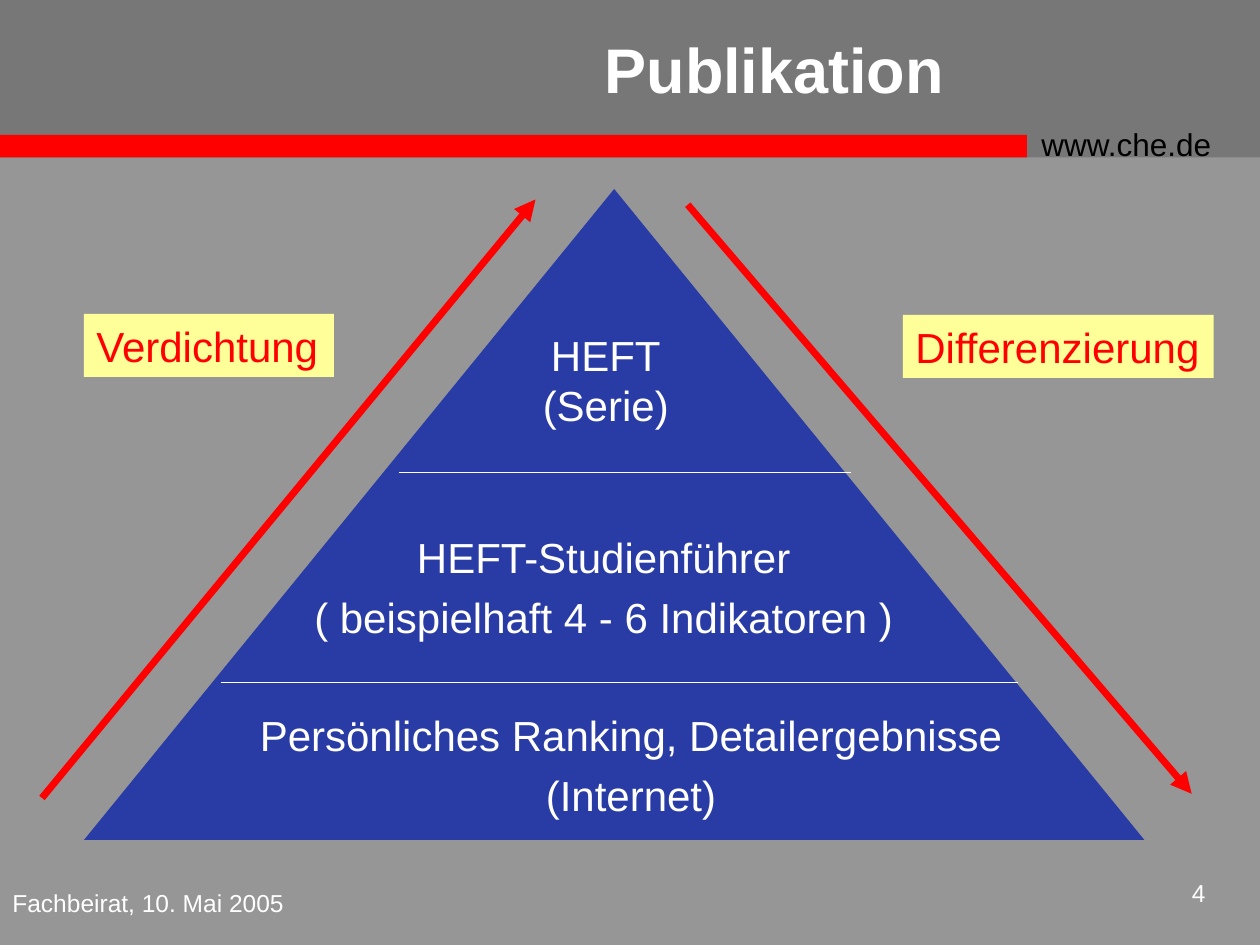
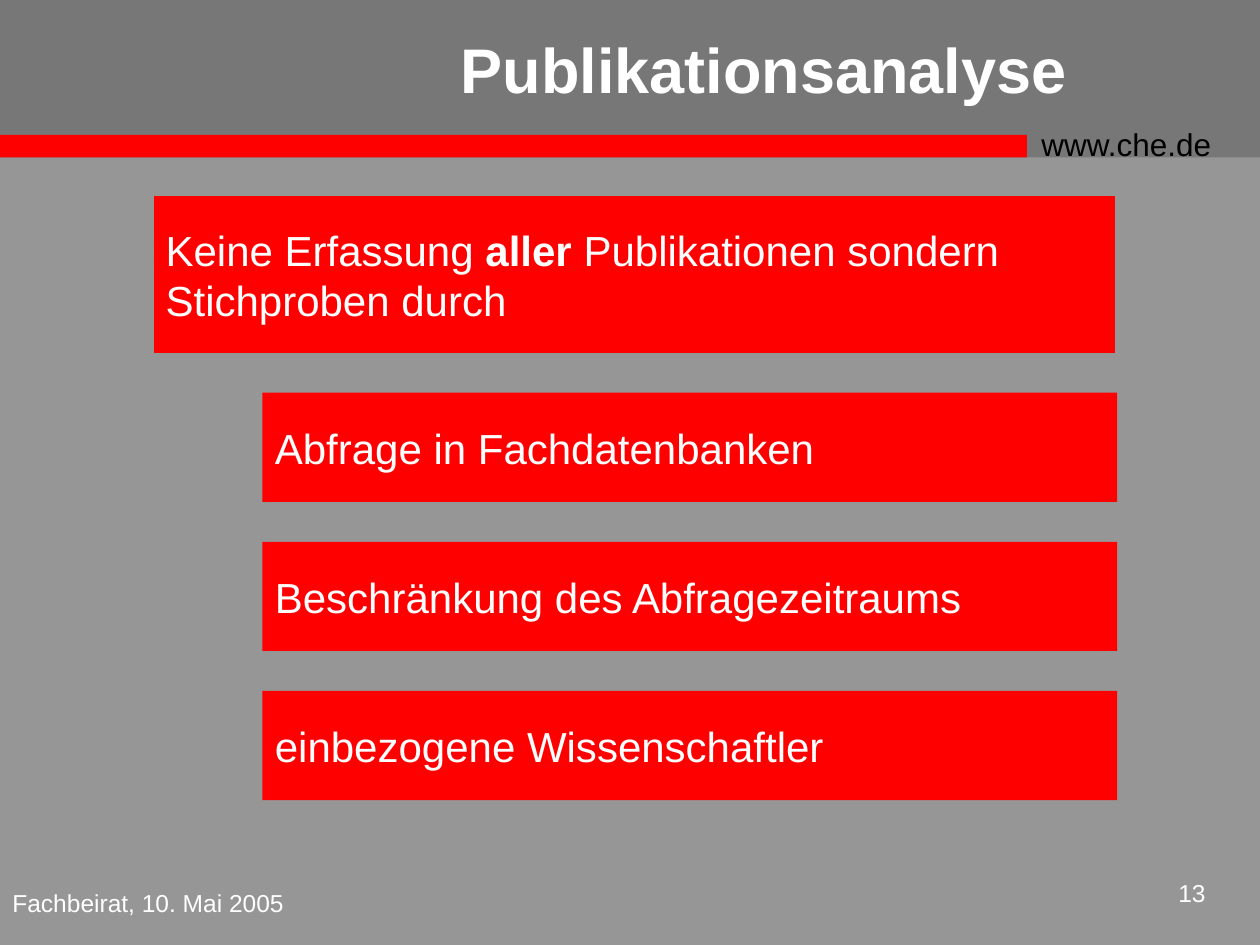
from lxml.etree import SubElement
from pptx import Presentation
from pptx.dml.color import RGBColor
from pptx.enum.shapes import MSO_CONNECTOR, MSO_SHAPE
from pptx.enum.text import MSO_ANCHOR, PP_ALIGN
from pptx.oxml.ns import qn
from pptx.util import Inches, Pt

WHITE = RGBColor(0xFF, 0xFF, 0xFF)
BLACK = RGBColor(0x00, 0x00, 0x00)
RED = RGBColor(0xFF, 0x00, 0x00)
BLUE = RGBColor(0x29, 0x3B, 0xA5)
YELLOW = RGBColor(0xFF, 0xFF, 0x99)
GREY = RGBColor(0x96, 0x96, 0x96)
DARK_GREY = RGBColor(0x77, 0x77, 0x77)

WIDTH, HEIGHT = Inches(10), Inches(7.5)
COLUMNS, ROWS = 120, 90

BODY = {"name": "Arial", "size": Pt(24), "color": WHITE}
TITLE = BODY | {"size": Pt(36), "bold": True}
SMALL = BODY | {"size": Pt(14)}
ADDRESS = BODY | {"size": Pt(18), "color": BLACK}
LABEL = BODY | {"color": RED}


def across(columns):
    return round(WIDTH * columns / COLUMNS)


def down(rows):
    return round(HEIGHT * rows / ROWS)


def place(left, top, width, height):
    return across(left), down(top), across(width), down(height)


def format_font(font, style):
    for name, value in style.items():
        if name == "color":
            font.color.rgb = value
        else:
            setattr(font, name, value)


def write(box, paragraphs, style, align=PP_ALIGN.LEFT, anchor=MSO_ANCHOR.TOP, gap=0):
    frame = box.text_frame
    frame.word_wrap = True
    frame.vertical_anchor = anchor
    for index, spans in enumerate(paragraphs):
        para = frame.add_paragraph() if index else frame.paragraphs[0]
        para.alignment = align
        if index:
            para.space_before = Pt(gap)
        for text, changes in spans:
            span = para.add_run()
            span.text = text
            format_font(span.font, style | changes)


def plain(*lines):
    return [[(line, {})] for line in lines]


def add_text(page, area, paragraphs, style, **layout):
    write(page.shapes.add_textbox(*place(*area)), paragraphs, style, **layout)


def add_block(page, area, fill, kind=MSO_SHAPE.RECTANGLE):
    block = page.shapes.add_shape(kind, *place(*area))
    block.shadow.inherit = False
    block.fill.solid()
    block.fill.fore_color.rgb = fill
    block.line.fill.background()
    return block


def add_line(page, start, end, color, weight, arrow=False):
    line = page.shapes.add_connector(
        MSO_CONNECTOR.STRAIGHT,
        across(start[0]), down(start[1]), across(end[0]), down(end[1]))
    line.line.color.rgb = color
    line.line.width = Pt(weight)
    properties = line._element.spPr
    if arrow:
        SubElement(properties.find(qn("a:ln")), qn("a:tailEnd"), type="triangle")
    SubElement(properties, qn("a:effectLst"))


def add_page(deck, title, title_left, number):
    page = deck.slides.add_slide(deck.slide_layouts[6])
    page.background.fill.solid()
    page.background.fill.fore_color.rgb = GREY
    add_block(page, (0, 0, COLUMNS, 15), DARK_GREY)
    add_block(page, (0, 12.85, 97.8, 2.15), RED)
    add_text(page, (98, 11.3, 21, 4.8), plain("www.che.de"), ADDRESS)
    add_text(page, (109, 83, 7, 5), plain(number), SMALL, align=PP_ALIGN.RIGHT)
    add_text(page, (0, 84, 28.8, 6), plain("Fachbeirat, 10. Mai 2005"), SMALL)
    add_text(page, (title_left, 0, 115.7 - title_left, 13), plain(title), TITLE,
             align=PP_ALIGN.CENTER, anchor=MSO_ANCHOR.MIDDLE)
    return page


def build_pyramid(deck):
    page = add_page(deck, "Publikation", 31.8, "4")
    add_block(page, (8, 18, 101, 62), BLUE, MSO_SHAPE.ISOSCELES_TRIANGLE)
    levels = [
        ((50.5, 30.8, 14.4, 10.8), ("HEFT", "(Serie)"), 0),
        ((7, 50, 101, 20.3),
         ("HEFT-Studienführer", "( beispielhaft 4 - 6 Indikatoren )"), 5.5),
        ((5, 67, 110.2, 16.3),
         ("Persönliches Ranking, Detailergebnisse", "(Internet)"), 5.5),
    ]
    for area, lines, gap in levels:
        add_text(page, area, plain(*lines), BODY, align=PP_ALIGN.CENTER, gap=gap)
    for left, right, row in [(38, 81, 45), (21, 97, 65)]:
        add_line(page, (left, row), (right, row), WHITE, 0.75)
    for area, text in [((8, 29.9, 23.8, 6), "Verdichtung"),
                       ((86, 30, 29.6, 6), "Differenzierung")]:
        write(add_block(page, area, YELLOW), plain(text), LABEL)
    for start, end in [((4, 76), (51, 19)), ((65.5, 19.5), (113.5, 75.6))]:
        add_line(page, start, end, RED, 4, arrow=True)


def build_analysis(deck):
    page = add_page(deck, "Publikationsanalyse", 29.8, "13")
    statement = add_block(page, (14.6, 18.6, 91.7, 15.1), RED)
    statement.line.color.rgb = GREY
    statement.line.width = Pt(0.75)
    sentence = [("Keine Erfassung ", {}), ("aller", {"bold": True}),
                (" Publikationen sondern Stichproben durch", {})]
    write(statement, [sentence], BODY, anchor=MSO_ANCHOR.MIDDLE)
    measures = ["Abfrage in Fachdatenbanken", "Beschränkung des Abfragezeitraums",
                "einbezogene Wissenschaftler"]
    for index, measure in enumerate(measures):
        block = add_block(page, (25, 37.4 + 14.2 * index, 81.4, 10.4), RED)
        write(block, plain(measure), BODY, anchor=MSO_ANCHOR.MIDDLE)


def main():
    deck = Presentation()
    deck.slide_width, deck.slide_height = WIDTH, HEIGHT
    build_pyramid(deck)
    build_analysis(deck)
    deck.save("out.pptx")


if __name__ == "__main__":
    main()
